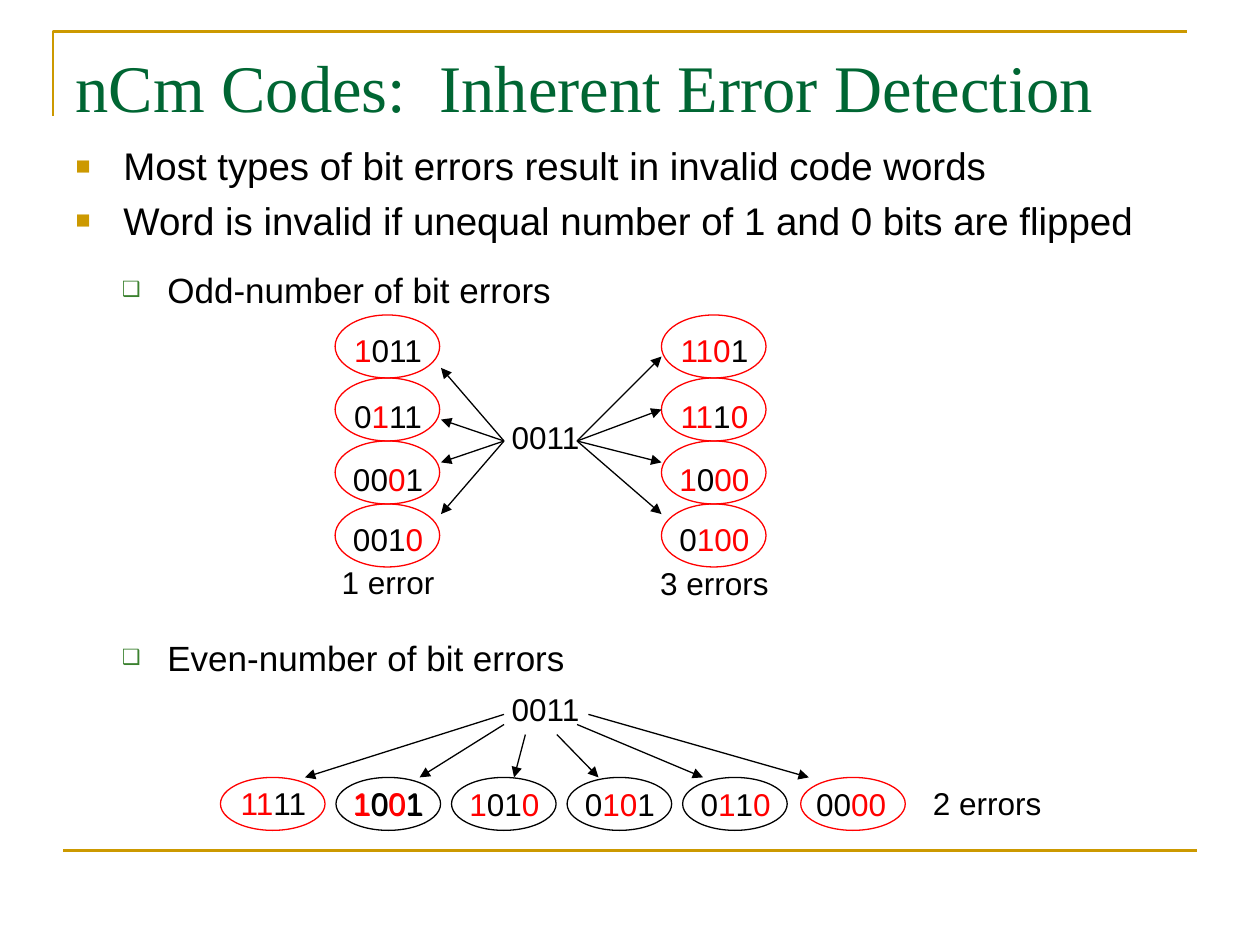
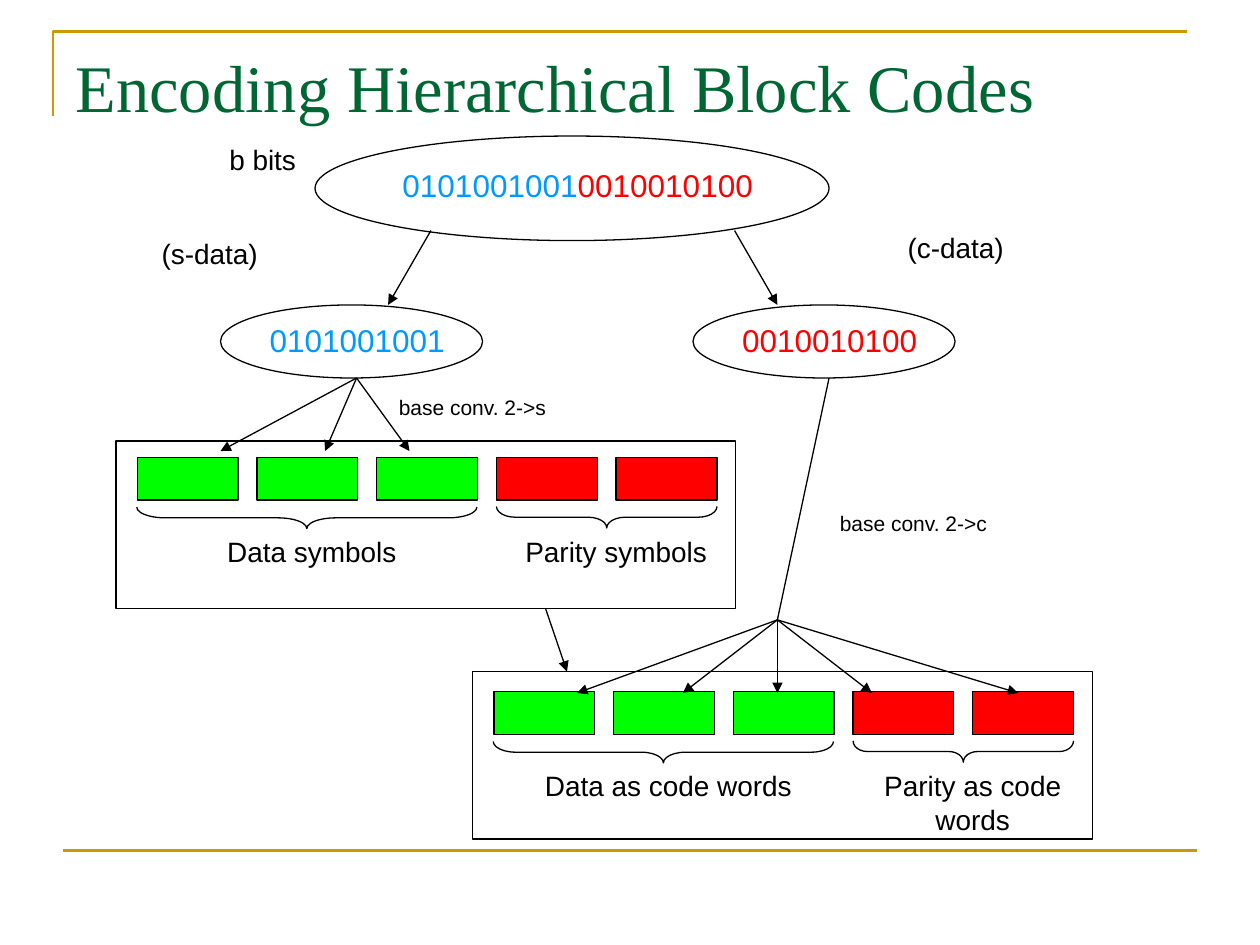
"""Build two slides on error-detecting nCm codes and hierarchical block codes."""
import dataclasses
import itertools

import lxml.etree
import pptx
import pptx.dml.color
import pptx.enum.shapes
import pptx.enum.text
import pptx.oxml.ns
import pptx.util

Inches = pptx.util.Inches
qn = pptx.oxml.ns.qn
RGB = pptx.dml.color.RGBColor.from_string
SHAPE = pptx.enum.shapes.MSO_SHAPE
ALIGN = pptx.enum.text.PP_ALIGN
ANCHOR = pptx.enum.text.MSO_ANCHOR


@dataclasses.dataclass(frozen=True)
class Theme:
    title_font: str = "Times New Roman"
    font: str = "Arial"
    gold: str = "CC9900"
    green: str = "006633"
    bullet_green: str = "3B812F"
    black: str = "000000"
    red: str = "FF0000"
    blue: str = "0099FF"
    lime: str = "00FF00"
    title: int = 38
    body: int = 22
    sub: int = 20
    code: int = 18
    label: int = 16
    note: int = 12
    rule: float = 1.5
    thin: float = 0.75


T = Theme()


def put_text(s, text, at=None, sp=None, size=T.code, font=T.font, color=T.black,
             align=ALIGN.CENTER, before=0, level=0, bullet=None):
    """Write a string or (string, colour) runs as a paragraph in sp or in a new box."""
    if sp is None:
        sp = s.shapes.add_textbox(*map(Inches, at))
    tf = sp.text_frame
    tf.word_wrap = True
    tf.auto_size = pptx.enum.text.MSO_AUTO_SIZE.NONE
    p = tf.add_paragraph() if tf.text else tf.paragraphs[0]
    p.alignment, p.level, p.space_before = align, level, pptx.util.Pt(before)
    for part, part_color in [(text, color)] if isinstance(text, str) else text:
        r = p.add_run()
        r.text = part
        r.font.size, r.font.name = pptx.util.Pt(size), font
        r.font.color.rgb = RGB(part_color)
    if bullet:
        char, bullet_color, percent, indent, hang = bullet
        pPr = p._p.get_or_add_pPr()
        pPr.set("marL", str(Inches(indent)))
        pPr.set("indent", str(-Inches(hang)))
        buClr = lxml.etree.SubElement(pPr, qn("a:buClr"))
        lxml.etree.SubElement(buClr, qn("a:srgbClr"), val=bullet_color)
        lxml.etree.SubElement(pPr, qn("a:buSzPct"), val=str(percent * 1000))
        lxml.etree.SubElement(pPr, qn("a:buFont"), typeface=T.font)
        lxml.etree.SubElement(pPr, qn("a:buChar"), char=char)
    return sp


def draw(s, kind, at, color=T.black, width=T.thin, fill=None):
    """Draw a preset shape in a box, or a path, line or arrow through points."""
    if kind in ("line", "arrow"):
        sp = s.shapes.add_connector(pptx.enum.shapes.MSO_CONNECTOR.STRAIGHT,
                                    *(Inches(v) for point in at for v in point))
    elif kind == "path":
        points = [(Inches(x), Inches(y)) for x, y in at]
        builder = s.shapes.build_freeform(*points[0])
        builder.add_line_segments(points[1:], close=False)
        sp = builder.convert_to_shape()
    else:
        sp = s.shapes.add_shape(kind, *map(Inches, at))
    sp.line.color.rgb = RGB(color)
    sp.line.width = pptx.util.Pt(width)
    if kind in ("line", "arrow"):
        spPr = sp.element.spPr
        if kind == "arrow":
            lxml.etree.SubElement(spPr.find(qn("a:ln")), qn("a:tailEnd"), type="triangle")
        lxml.etree.SubElement(spPr, qn("a:effectLst"))
    else:
        sp.shadow.inherit = False
        if fill:
            sp.fill.solid()
            sp.fill.fore_color.rgb = RGB(fill)
        else:
            sp.fill.background()
    return sp


prs = pptx.Presentation()
prs.slide_width, prs.slide_height = Inches(10), Inches(7.5)
codes = prs.slides.add_slide(prs.slide_layouts[1])
blocks = prs.slides.add_slide(prs.slide_layouts[5])

frame = draw(codes, "path", [(0.42, 0.92), (0.42, 0.25), (9.42, 0.25)], T.gold, T.rule)
base = draw(codes, "line", [(0.5, 6.75), (9.5, 6.75)], T.gold, T.rule)
for number, sp in enumerate((frame, base), 20):
    sp.element.xpath(".//p:cNvPr")[0].set("id", str(number))
    prs.slide_master.shapes.element.append(sp.element)

for s, title in ((codes, "nCm Codes:  Inherent Error Detection"),
                 (blocks, "Encoding Hierarchical Block Codes")):
    sp = s.shapes.title
    sp.left, sp.top, sp.width, sp.height = map(Inches, (0.5, 0.3, 9, 0.7))
    put_text(s, title, sp=sp, size=T.title, font=T.title_font, color=T.green, align=ALIGN.LEFT)
    sp.text_frame.vertical_anchor = ANCHOR.BOTTOM
    sp.text_frame.margin_bottom = 0

s = codes
body = s.placeholders[1]
body.left, body.top, body.width, body.height = map(Inches, (0.5, 1.08, 9, 1))
for line, before in (("Most types of bit errors result in invalid code words", 0),
                     ("Word is invalid if unequal number of 1 and 0 bits are flipped", 5)):
    put_text(s, line, sp=body, size=T.body, align=ALIGN.LEFT, before=before,
             bullet=("■", T.gold, 65, 0.38, 0.38))
for line, y in (("Odd-number of bit errors", 2.08), ("Even-number of bit errors", 5)):
    put_text(s, line, at=(0.5, y, 9, 0.42), size=T.sub, align=ALIGN.LEFT, level=1,
             bullet=("❑", T.bullet_green, 60, 0.73, 0.36))

sent = "0011"
for y in (3.27, 5.43):
    put_text(s, sent, at=(3.83, y, 1, 0.4))
words = []
for x, column in ((2.58, ("1011", "0111", "0001", "0010")),
                  (5.17, ("1101", "1110", "1000", "0100"))):
    for row, (word, y) in enumerate(zip(column, (2.58, 3.1, 3.6, 4.08))):
        words.append((word, x, y))
        draw(s, SHAPE.OVAL, (x + 0.08, 2.5 + 0.5 * row, 0.83, 0.5), T.red)
even_words = ("1111", "1001", "1010", "0101", "0110", "0000")
for i, word in enumerate(even_words):
    valid = word.count("1") == 2
    words.append((word, 1.67 + 0.917 * i, 6.18 if i else 6.17))
    draw(s, SHAPE.OVAL, (1.75 + 0.917 * i + (0.02 if i == 5 else 0), 6.17, 0.83, 0.42),
         T.black if valid else T.red)
words.append(("1001", 2.58, 6.17))
for word, x, y in words:
    pairs = itertools.groupby(zip(word, sent), key=lambda bits: bits[0] != bits[1])
    runs = [("".join(bit for bit, _ in group), T.red if flipped else T.black)
            for flipped, group in pairs]
    put_text(s, runs, at=(x, y, 1, 0.4))

for start, x, ends in (((4, 3.5), 3.5, (2.92, 3.33, 3.67, 4.08)),
                       ((4.58, 3.5), 5.25, (2.83, 3.25, 3.67, 4.08))):
    for y in ends:
        draw(s, "arrow", [start, (x, y)])
for x, y, end in ((4, 5.67, 2.42), (4, 5.75, 3.33), (4.17, 5.83, 4.08),
                  (4.42, 5.83, 4.75), (4.58, 5.75, 5.58), (4.67, 5.67, 6.42)):
    draw(s, "arrow", [(x, y), (end, 6.17)])
for label, x, y, w in (("1 error", 2.33, 4.42, 1.5), ("3 errors", 4.92, 4.43, 1.5),
                       ("2 errors", 7.25, 6.17, 1.17)):
    put_text(s, label, at=(x, y, w, 0.4))

s = blocks
s_data, c_data = ("0101001001", T.blue), ("0010010100", T.red)
for oval, runs, x, y in (((2.5, 1.08, 4.08, 0.83), [s_data, c_data], 2.92, 1.27),
                         ((1.75, 2.42, 2.08, 0.58), [s_data], 1.17, 2.5),
                         ((5.5, 2.42, 2.08, 0.58), [c_data], 4.92, 2.5)):
    draw(s, SHAPE.OVAL, oval)
    put_text(s, runs, at=(x, y, 3.33, 0.4))
for label, x, y, w, size in (("b bits", 1.5, 1.08, 1.17, T.label),
                             ("(s-data)", 1, 1.83, 1.33, T.label),
                             ("(c-data)", 6.92, 1.78, 1.33, T.label),
                             ("base conv. 2->s", 2.75, 3.08, 2, T.note),
                             ("base conv. 2->c", 6.25, 4, 2, T.note)):
    put_text(s, label, at=(x, y, w, 0.37), size=size)

for x, y, cell_y, data, parity, curves in (
        (0.92, 3.5, 3.63, "Data symbols", "Parity symbols", (1.34, 0.87)),
        (3.75, 5.33, 5.49, "Data as code words", "Parity as code words", (1.03, 0.67))):
    draw(s, SHAPE.RECTANGLE, (x, y, 4.92, 1.33))
    for i in range(5):
        draw(s, SHAPE.RECTANGLE, (x + 0.17 + 0.95 * i, cell_y, 0.8, 0.34),
             fill=T.lime if i < 3 else T.red)
    for dx, dy, length, curve in ((1.43, -0.87, 2.7, curves[0]), (3.81, -0.4, 1.75, curves[1])):
        brace = draw(s, SHAPE.RIGHT_BRACE, (x + dx, cell_y + dy, 0.17, length))
        brace.rotation = 90
        brace.adjustments[0] = curve
    put_text(s, data, at=(x + 0.24, cell_y + 0.56, 2.63, 0.37), size=T.label)
    put_text(s, parity, at=(x + 3.02, cell_y + 0.56, 1.9, 0.64), size=T.label)

fork = (6.17, 4.92)
draw(s, "line", [(6.58, 3), fork])
for start, y, ends in (((3.42, 1.83), 2.42, (3.08,)), ((5.83, 1.83), 2.42, (6.17,)),
                       ((2.83, 3), 3.58, (1.75, 2.58, 3.25)), ((4.33, 4.83), 5.33, (4.5,)),
                       (fork, 5.5, (4.58, 5.42, 6.17, 6.92, 8.08))):
    for x in ends:
        draw(s, "arrow", [start, (x, y)])

prs.save("out.pptx")
